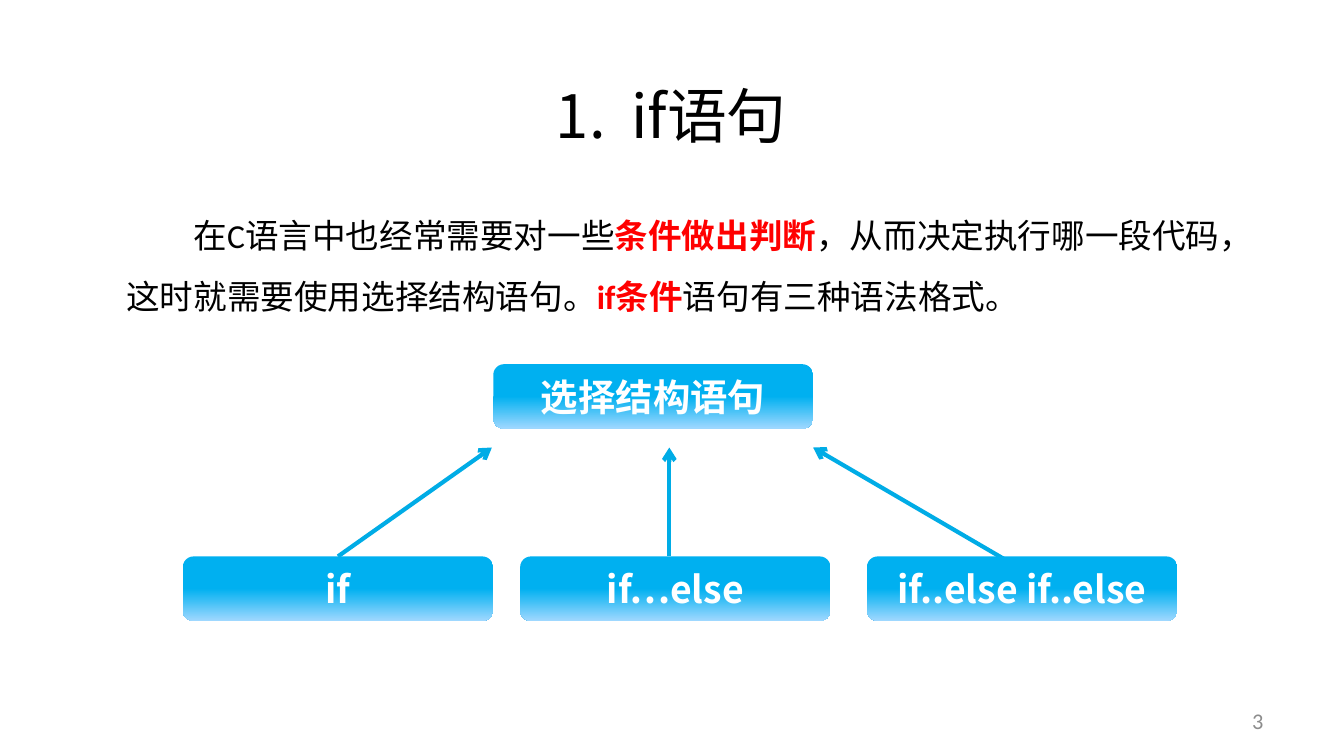
from copy import deepcopy

from pptx import Presentation, util as u
from pptx.dml.color import RGBColor
from pptx.enum import shapes, text
from pptx.oxml.ns import qn
from lxml import etree

CJK_FONT = "Noto Sans CJK SC"
BOX_HEIGHT = 0.48
CHOICE_TOP = 4.14
CHOICE_WIDTH = 2.31
ARROW_TOP = 3.33


def color(value):
    return RGBColor.from_string(value)


def add_run(paragraph, words, fill, **format_values):
    run = paragraph.add_run()
    run.text = words
    for name, value in format_values.items():
        setattr(run.font, name, value)
    run.font.color.rgb = color(fill)
    east_asian = etree.SubElement(run.font._element, qn("a:ea"))
    east_asian.set("typeface", CJK_FONT)


presentation = Presentation()
presentation.slide_width = u.Inches(10)
presentation.slide_height = u.Inches(10) * 9 // 16
slide = presentation.slides.add_slide(presentation.slide_layouts[1])
title, body = slide.placeholders

for placeholder, box, anchor in (
    (title, (1.08, 0.53, 7.93, 0.64), text.MSO_ANCHOR.MIDDLE),
    (body, (0.84, 1.4, 8.37, 0.96), text.MSO_ANCHOR.TOP),
):
    for name, value in zip(("left", "top", "width", "height"), box):
        setattr(placeholder, name, u.Inches(value))
    frame_format = {
        "word_wrap": True,
        "auto_size": text.MSO_AUTO_SIZE.NONE,
        "vertical_anchor": anchor,
    }
    for name, value in frame_format.items():
        setattr(placeholder.text_frame, name, value)

paragraph = title.text_frame.paragraphs[0]
paragraph.alignment = text.PP_ALIGN.CENTER
properties = paragraph._p.get_or_add_pPr()
properties.set("marL", str(u.Inches(0.56)))
properties.set("indent", str(u.Inches(-0.56)))
etree.SubElement(properties, qn("a:buFont")).set("typeface", "+mj-lt")
etree.SubElement(properties, qn("a:buAutoNum")).set("type", "arabicPeriod")
add_run(paragraph, "if语句 ", "000000", size=u.Pt(32), name=CJK_FONT)

paragraph = body.text_frame.paragraphs[0]
paragraph.line_spacing = 1.5
paragraph.space_before = u.Pt(0)
properties = paragraph._p.get_or_add_pPr()
properties.set("marL", "0")
properties.set("indent", str(u.Inches(0.5)))
etree.SubElement(properties, qn("a:buNone"))
for words, emphasized in (
    ("在C语言中也经常需要对一些", False),
    ("条件做出判断", True),
    ("，从而决定执行哪一段代码，这时就需要使用选择结构语句。", False),
    ("if条件", True),
    ("语句有三种语法格式。", False),
):
    fill = "FF0000" if emphasized else "000000"
    add_run(paragraph, words, fill, size=u.Pt(18), name="Calibri", bold=emphasized)

arrows = []
for start, end in (
    ((7.66, 4.27), (6.05, ARROW_TOP)),
    ((2.51, CHOICE_TOP), (3.66, ARROW_TOP)),
    ((4.98, CHOICE_TOP), (4.98, ARROW_TOP)),
):
    arrow = slide.shapes.add_connector(
        shapes.MSO_CONNECTOR.STRAIGHT, *map(u.Inches, start + end))
    arrow.line.color.rgb = color("00ACE6")
    arrow.line.width = u.Pt(2.25)
    etree.SubElement(arrow.line._get_or_add_ln(), qn("a:tailEnd")).set("type", "arrow")
    etree.SubElement(arrow._element.spPr, qn("a:effectLst"))
    arrows.append(arrow)

boxes = {}
for words, left, top, width in (
    ("选择结构语句", 3.67, 2.71, 2.38),
    ("if", 1.36, CHOICE_TOP, CHOICE_WIDTH),
    ("if…else", 3.87, CHOICE_TOP, CHOICE_WIDTH),
    ("if..else if..else", 6.45, CHOICE_TOP, CHOICE_WIDTH),
):
    shape = slide.shapes.add_shape(
        shapes.MSO_SHAPE.ROUNDED_RECTANGLE,
        *map(u.Inches, (left, top, width, BOX_HEIGHT)))
    shape.shadow.inherit = False
    shape.line.fill.background()
    shape.fill.gradient()
    shape.fill.gradient_angle = 270
    first_stop = shape.fill.gradient_stops[0]._gs
    first_stop.addnext(deepcopy(first_stop))
    for stop, position, value in zip(
        shape.fill.gradient_stops, (0, 0.5, 1), ("00B0F0", "00B0F0", "9FD8FF")
    ):
        stop.position = position
        stop.color.rgb = color(value)
    shape.text_frame.word_wrap = True
    shape.text_frame.vertical_anchor = text.MSO_ANCHOR.MIDDLE
    paragraph = shape.text_frame.paragraphs[0]
    paragraph.alignment = text.PP_ALIGN.CENTER
    add_run(paragraph, words, "FFFFFF", size=u.Pt(20), name=CJK_FONT, bold=True)
    boxes[words] = shape

arrows[1].begin_connect(boxes["if"], 0)

page_number = slide.shapes.add_textbox(*map(u.Inches, (7.17, 5.21, 2.33, 0.3)))
page_number.text_frame.word_wrap = True
page_number.text_frame.vertical_anchor = text.MSO_ANCHOR.MIDDLE
paragraph = page_number.text_frame.paragraphs[0]
paragraph.alignment = text.PP_ALIGN.RIGHT
add_run(paragraph, "3", "8C8C8C", size=u.Pt(12), name="Calibri")

presentation.save("out.pptx")
